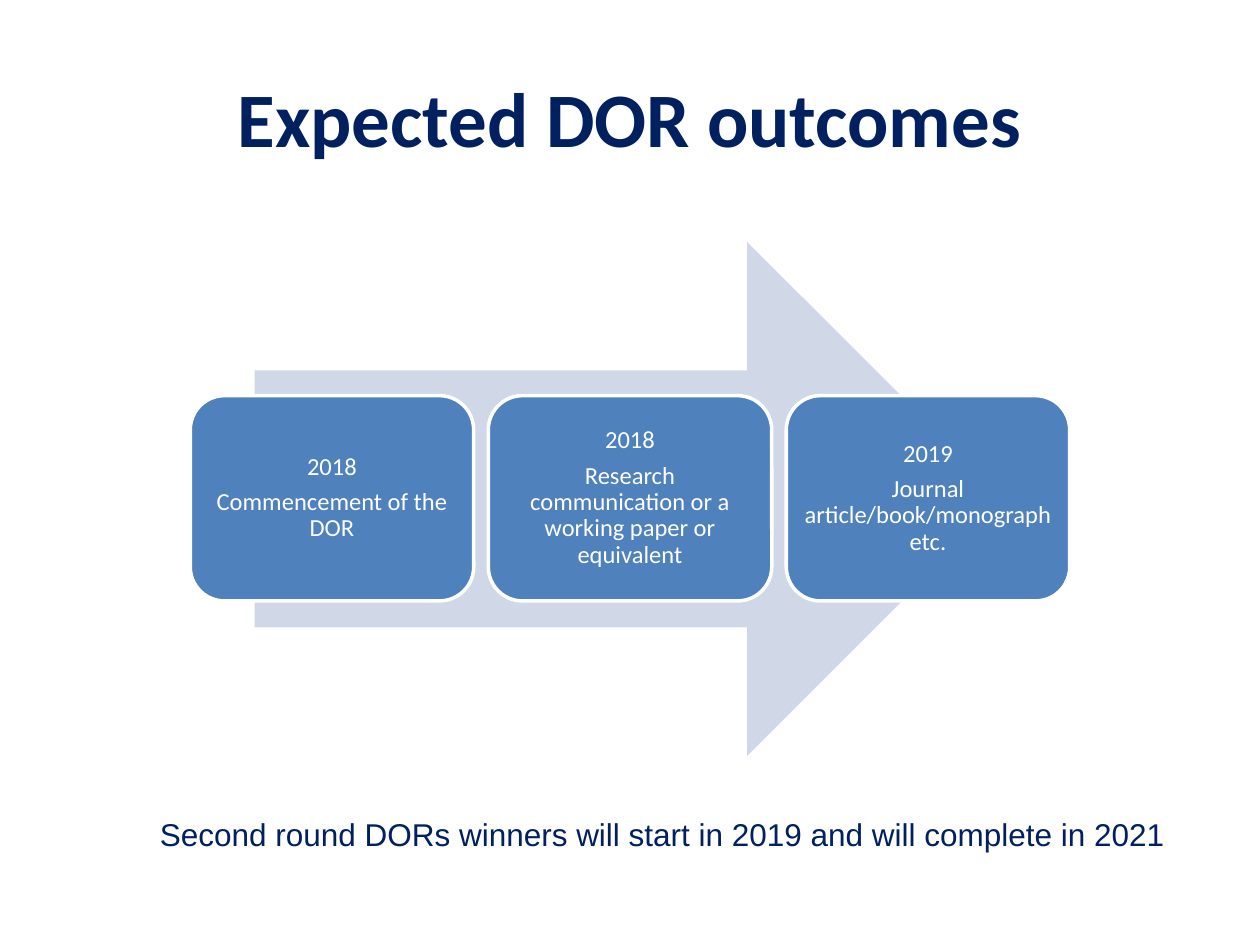
"""Build the slide of expected DOR outcomes as a three-step arrow process."""
import dataclasses
import typing

import pptx
import pptx.dml.color
import pptx.enum.shapes
import pptx.enum.text
import pptx.util

Inches = pptx.util.Inches
Pt = pptx.util.Pt
Align = pptx.enum.text.PP_ALIGN
Anchor = pptx.enum.text.MSO_ANCHOR
Preset = pptx.enum.shapes.MSO_SHAPE


@dataclasses.dataclass(frozen=True)
class Theme:
    navy: str = "002060"
    blue: str = "4F81BD"
    pale: str = "D0D8E8"
    white: str = "FFFFFF"
    heading_font: str = "Calibri"
    note_font: str = "Arial"
    title_size: int = 44
    note_size: int = 18
    step_size: int = 14


@dataclasses.dataclass(frozen=True)
class Box:
    left: float
    top: float
    width: float
    height: float

    def lengths(self) -> list[int]:
        return [Inches(value) for value in dataclasses.astuple(self)]


@dataclasses.dataclass(frozen=True)
class Step:
    year: str
    outcome: str


THEME = Theme()
TITLE = Box(0.5, 0.3, 9, 1.25)
ARROW = Box(2.02, 1.92, 5.95, 4.08)
FIRST_STEP = Box(1.51, 3.14, 2.25, 1.63)
STEP_PITCH = 2.365
NOTE = Box(1.17, 6.42, 8.32, 0.4)
STEPS = [
    Step("2018", "Commencement of the DOR"),
    Step("2018", "Research communication or a working paper or equivalent"),
    Step("2019", "Journal article/book/monograph etc."),
]


def apply_format(target: typing.Any, values: dict[str, typing.Any]) -> None:
    for name, value in values.items():
        setattr(target, name, value)


def write_lines(shape: typing.Any, lines: list[str], font: dict[str, typing.Any],
                color: str, layout: dict[str, typing.Any]) -> None:
    shape.text_frame.text = "\n".join(lines)
    for paragraph in shape.text_frame.paragraphs:
        apply_format(paragraph, layout)
        run_font = paragraph.runs[0].font
        apply_format(run_font, font)
        run_font.color.rgb = pptx.dml.color.RGBColor.from_string(color)


def add_text(slide: typing.Any, box: Box, text: str, font: dict[str, typing.Any],
             frame: dict[str, typing.Any], layout: dict[str, typing.Any]) -> None:
    shape = slide.shapes.add_textbox(*box.lengths())
    apply_format(shape.text_frame, frame)
    write_lines(shape, [text], font, THEME.navy, layout)


def add_filled_shape(slide: typing.Any, preset: typing.Any, box: Box, color: str) -> typing.Any:
    shape = slide.shapes.add_shape(preset, *box.lengths())
    shape.shadow.inherit = False
    shape.fill.solid()
    shape.fill.fore_color.rgb = pptx.dml.color.RGBColor.from_string(color)
    shape.line.fill.background()
    return shape


def add_step(slide: typing.Any, step: Step, index: int) -> None:
    box = dataclasses.replace(FIRST_STEP, left=FIRST_STEP.left + index * STEP_PITCH)
    shape = add_filled_shape(slide, Preset.ROUNDED_RECTANGLE, box, THEME.blue)
    shape.line.color.rgb = pptx.dml.color.RGBColor.from_string(THEME.white)
    shape.line.width = Pt(2)
    margins = ("margin_left", "margin_top", "margin_right", "margin_bottom")
    apply_format(shape.text_frame, {
        "word_wrap": True, "vertical_anchor": Anchor.MIDDLE,
        **dict.fromkeys(margins, Inches(0.06)),
    })
    write_lines(
        shape, [step.year, step.outcome],
        {"name": THEME.heading_font, "size": Pt(THEME.step_size)}, THEME.white,
        {"alignment": Align.CENTER, "line_spacing": 0.9,
         "space_after": Pt(0.35 * THEME.step_size)},
    )


def main() -> None:
    presentation = pptx.Presentation()
    apply_format(presentation, {"slide_width": Inches(10), "slide_height": Inches(7.5)})
    slide = presentation.slides.add_slide(presentation.slide_layouts[6])
    add_text(
        slide, TITLE, "Expected DOR outcomes",
        {"name": THEME.heading_font, "size": Pt(THEME.title_size), "bold": True},
        {"word_wrap": True, "vertical_anchor": Anchor.MIDDLE},
        {"alignment": Align.CENTER},
    )
    add_filled_shape(slide, Preset.RIGHT_ARROW, ARROW, THEME.pale)
    for index, step in enumerate(STEPS):
        add_step(slide, step, index)
    add_text(
        slide, NOTE, "Second round DORs winners will start in 2019 and will complete in 2021",
        {"name": THEME.note_font, "size": Pt(THEME.note_size)},
        {"word_wrap": False, "auto_size": pptx.enum.text.MSO_AUTO_SIZE.SHAPE_TO_FIT_TEXT},
        {"alignment": Align.LEFT},
    )
    presentation.save("out.pptx")


if __name__ == "__main__":
    main()
